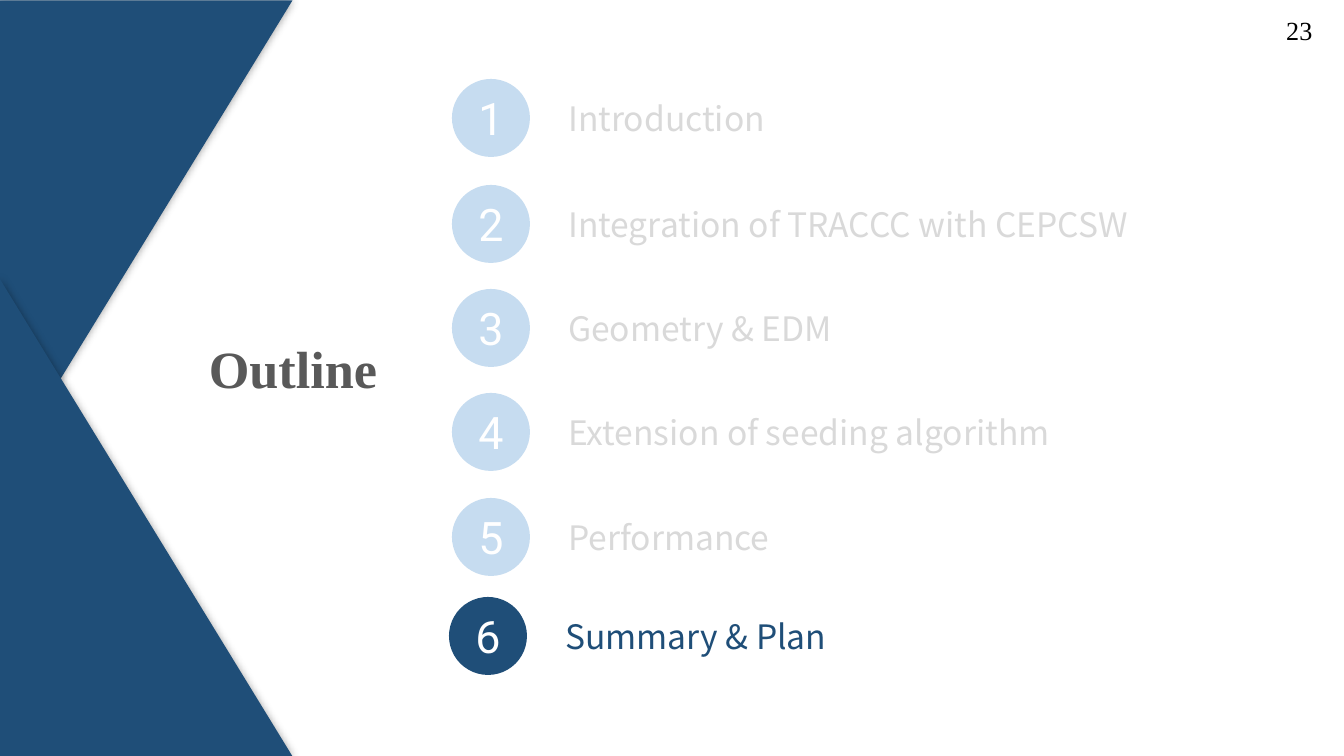
import pptx
import pptx.dml.color
import pptx.enum.shapes
import pptx.enum.text
import pptx.oxml
import pptx.oxml.ns
import pptx.util

RGB = pptx.dml.color.RGBColor
NAVY = RGB(0x1F, 0x4E, 0x78)
PALE = RGB(0xC6, 0xDC, 0xF0)
GREY = RGB(0xD9, 0xD9, 0xD9)
DARK = RGB(0x59, 0x59, 0x59)
WHITE = RGB(0xFF, 0xFF, 0xFF)
BLACK = RGB(0, 0, 0)

SHAPE = pptx.enum.shapes.MSO_SHAPE
ALIGN = pptx.enum.text.PP_ALIGN
ANCHOR = pptx.enum.text.MSO_ANCHOR
SCALE = 9144000 / 1344

SHADOW = (
    f'<a:effectLst {pptx.oxml.ns.nsdecls("a")}>'
    '<a:outerShdw blurRad="63500" dist="0" dir="0" algn="ctr" rotWithShape="0">'
    '<a:srgbClr val="000000"><a:alpha val="40000"/></a:srgbClr>'
    '</a:outerShdw></a:effectLst>'
)


def px(*sizes):
    """Turn pixel lengths into EMU."""
    return [round(size * SCALE) for size in sizes]


def write(shape, text, size, face, color, align=ALIGN.LEFT):
    para = shape.text_frame.paragraphs[0]
    para.text = text
    para.alignment = align
    para.font.size = pptx.util.Pt(size)
    para.font.name = face
    para.font.color.rgb = color


deck = pptx.Presentation()
deck.slide_width, deck.slide_height = px(1344, 756)
slide = deck.slides.add_slide(deck.slide_layouts[5])
shapes = slide.shapes

# Two folded triangles at the left edge
group = shapes.add_group_shape()
for top, flips in [(93, ("flipH", "flipV")), (371, ("flipV",))]:
    fold = group.shapes.add_shape(SHAPE.RIGHT_TRIANGLE, *px(-93, top, 478, 293))
    fold.rotation = 270
    for flip in flips:
        fold._element.spPr.xfrm.set(flip, "1")
    fold.fill.solid()
    fold.fill.fore_color.rgb = NAVY
    fold.line.fill.background()
    fold._element.spPr.append(pptx.oxml.parse_xml(SHADOW))

# Title
title = shapes.title
title.left, title.top, title.width, title.height = px(82, 328, 422, 78)
title.text_frame.vertical_anchor = ANCHOR.BOTTOM
write(title, "Outline", 28, "Times New Roman", DARK, ALIGN.CENTER)
title.text_frame.paragraphs[0].font.bold = True

# Numbered topics, the current one in navy
topics = [
    ("Introduction", 79, 228),
    ("Integration of TRACCC with CEPCSW", 185, 620),
    ("Geometry & EDM", 289, 327),
    ("Extension of seeding algorithm", 393, 532),
    ("Performance", 498, 234),
    ("Summary & Plan", 597, 301),
]
now = 6
for num, (topic, top, width) in enumerate(topics, 1):
    left, fill, ink = (449, NAVY, NAVY) if num == now else (452, PALE, GREY)
    disc = shapes.add_shape(SHAPE.OVAL, *px(left, top, 78, 78))
    disc.shadow.inherit = False
    disc.fill.solid()
    disc.fill.fore_color.rgb = fill
    disc.line.fill.background()
    disc.text_frame.vertical_anchor = ANCHOR.MIDDLE
    write(disc, str(num), 24, "Roboto", WHITE, ALIGN.CENTER)

    label = shapes.add_textbox(*px(left + 103, top + 12, width, 54))
    label.text_frame.word_wrap = False
    label.text_frame.auto_size = pptx.enum.text.MSO_AUTO_SIZE.SHAPE_TO_FIT_TEXT
    write(label, topic, 18, "Noto Sans CJK SC", ink)

# Page number
page = shapes.add_textbox(*px(1273, 4, 63, 35))
page.text_frame.word_wrap = True
page.text_frame.margin_top = px(10)[0]
write(page, "23", 14, "Times New Roman", BLACK)

deck.save("out.pptx")
